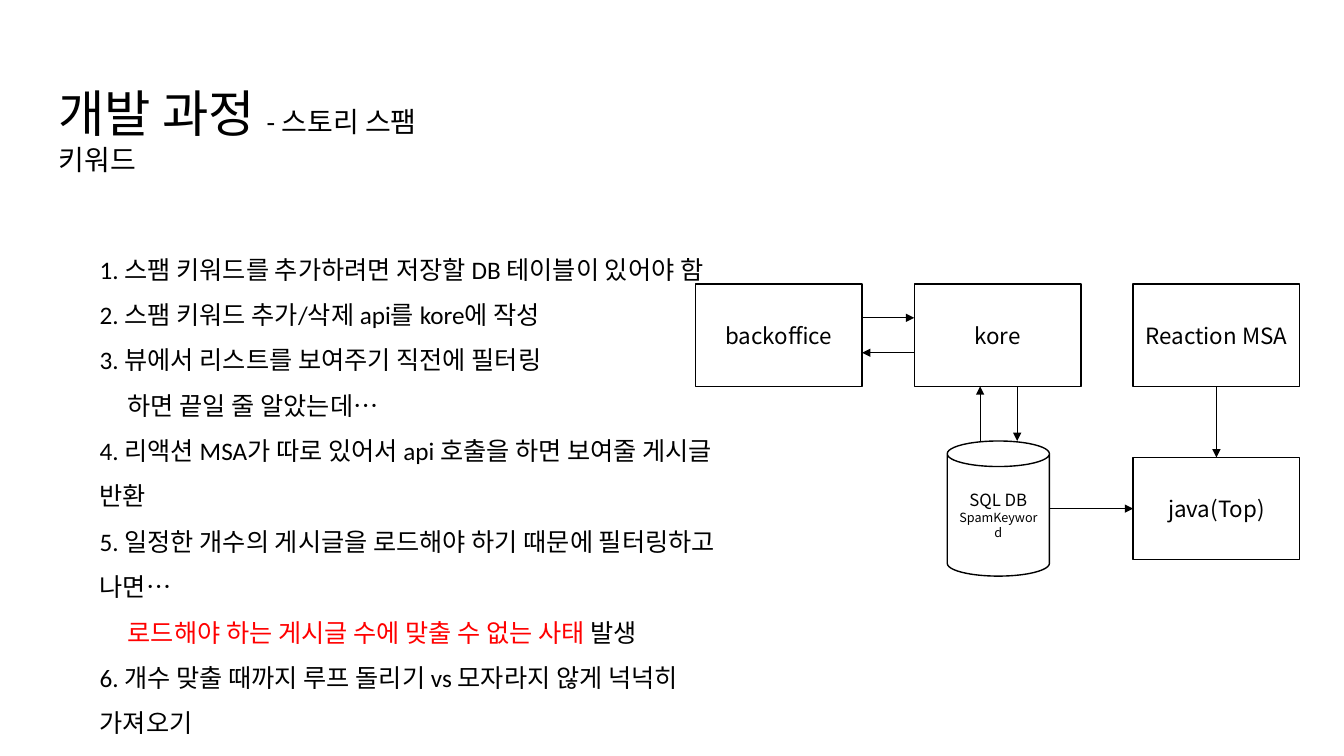
from dataclasses import dataclass

from lxml.etree import SubElement
from pptx import Presentation
from pptx.dml.color import RGBColor
from pptx.enum.shapes import MSO_CONNECTOR, MSO_SHAPE
from pptx.enum.text import MSO_ANCHOR, MSO_AUTO_SIZE, PP_ALIGN
from pptx.oxml.ns import qn
from pptx.util import Pt

TITLE = [("개발 과정 ", "title"), ("- 스토리 스팸 키워드", "subtitle")]
STEPS = [
    (0, [("1. 스팸 키워드를 추가하려면 저장할 DB 테이블이 있어야 함", "ink")]),
    (0, [("2. 스팸 키워드 추가/삭제 api를 kore에 작성", "ink")]),
    (0, [("3. 뷰에서 리스트를 보여주기 직전에 필터링", "ink")]),
    (20, [("하면 끝일 줄 알았는데…", "ink")]),
    (0, [("4. 리액션 MSA가 따로 있어서 api 호출을 하면 보여줄 게시글 반환", "ink")]),
    (0, [("5. 일정한 개수의 게시글을 로드해야 하기 때문에 필터링하고 나면…", "ink")]),
    (20, [("로드해야 하는 게시글 수에 맞출 수 없는 사태", "alert"), (" 발생", "ink")]),
    (0, [("6. 개수 맞출 때까지 루프 돌리기 vs 모자라지 않게 넉넉히 가져오기", "ink")]),
]
SERVICES = [("backoffice", 0, 0), ("kore", 1, 0), ("Reaction MSA", 2, 0), ("java(Top)", 2, 1)]
DATABASE = [("SQL DB", "db"), ("SpamKeyword", "table")]


@dataclass(frozen=True)
class Theme:
    text_font: str = "Calibri"
    box_font: str = "Noto Sans CJK KR"
    ink: RGBColor = RGBColor(0, 0, 0)
    alert: RGBColor = RGBColor(255, 0, 0)
    paper: RGBColor = RGBColor(255, 255, 255)
    title: int = 36
    subtitle: int = 20
    body: int = 18
    box: int = 16
    db: int = 12
    table: int = 9


T = Theme()
BOX_W, BOX_H = 119, 73
LEFT, TOP = 496.8, 203
COL_STEP, ROW_STEP = 156.3, 123.8
CAN_W, CAN_H = 73, 96.5


def place(sp, x, y, w, h):
    sp.left, sp.top, sp.width, sp.height = Pt(x), Pt(y), Pt(w), Pt(h)
    tf = sp.text_frame
    tf.word_wrap = True
    tf.auto_size = MSO_AUTO_SIZE.NONE
    tf.vertical_anchor = MSO_ANCHOR.TOP
    return tf


def add_run(p, text, name, size, color):
    r = p.add_run()
    r.text = text
    r.font.name, r.font.size = name, Pt(size)
    r.font.color.rgb = color


def add_title(s):
    tf = place(s.shapes.title, 34.6, 54.7, 311.8, 51)
    p = tf.paragraphs[0]
    p.alignment = PP_ALIGN.LEFT
    for text, size in TITLE:
        add_run(p, text, T.text_font, getattr(T, size), T.ink)


def add_steps(s):
    tf = place(s.placeholders[1], 64, 167, 468.7, 265)
    for i, (indent, runs) in enumerate(STEPS):
        p = tf.paragraphs[0] if i == 0 else tf.add_paragraph()
        p.line_spacing = 1.5
        p.space_before = Pt(0)
        pPr = p._p.get_or_add_pPr()
        pPr.set("marL", str(Pt(indent)))
        pPr.set("indent", "0")
        SubElement(pPr, qn("a:buNone"))
        for text, color in runs:
            add_run(p, text, T.text_font, T.body, getattr(T, color))


def add_node(s, kind, x, y, w, h, lines):
    sp = s.shapes.add_shape(kind, Pt(x), Pt(y), Pt(w), Pt(h))
    sp.shadow.inherit = False
    sp.fill.solid()
    sp.fill.fore_color.rgb = T.paper
    sp.line.color.rgb = T.ink
    sp.line.width = Pt(1)
    tf = sp.text_frame
    tf.word_wrap = True
    tf.vertical_anchor = MSO_ANCHOR.MIDDLE
    for i, (text, size) in enumerate(lines):
        p = tf.paragraphs[0] if i == 0 else tf.add_paragraph()
        p.alignment = PP_ALIGN.CENTER
        add_run(p, text, T.box_font, getattr(T, size), T.ink)


def add_arrow(s, x1, y1, x2, y2):
    c = s.shapes.add_connector(MSO_CONNECTOR.STRAIGHT, Pt(x1), Pt(y1), Pt(x2), Pt(y2))
    c.line.color.rgb = T.ink
    c.line.width = Pt(0.5)
    SubElement(c.line._get_or_add_ln(), qn("a:tailEnd"), type="triangle")
    SubElement(c._element.spPr, qn("a:effectLst"))


def add_diagram(s):
    for name, col, row in SERVICES:
        add_node(s, MSO_SHAPE.RECTANGLE, LEFT + col * COL_STEP, TOP + row * ROW_STEP,
                 BOX_W, BOX_H, [(name, "box")])
    kore_x, right_x = LEFT + COL_STEP, LEFT + 2 * COL_STEP
    bottom, java_y = TOP + BOX_H, TOP + ROW_STEP
    java_mid = java_y + BOX_H / 2
    can_x, can_y = kore_x + (BOX_W - CAN_W) / 2 + 0.5, java_mid - CAN_H / 2
    add_node(s, MSO_SHAPE.CAN, can_x, can_y, CAN_W, CAN_H, DATABASE)

    add_arrow(s, LEFT + BOX_W, TOP + 24, kore_x, TOP + 24)
    add_arrow(s, kore_x, TOP + 49, LEFT + BOX_W, TOP + 49)
    add_arrow(s, kore_x + 47, can_y, kore_x + 47, bottom)
    add_arrow(s, kore_x + 73.5, bottom, kore_x + 73.5, can_y)
    add_arrow(s, right_x + BOX_W / 2, bottom, right_x + BOX_W / 2, java_y)
    add_arrow(s, can_x + CAN_W, java_mid, right_x, java_mid)


def main():
    prs = Presentation()
    prs.slide_width, prs.slide_height = Pt(960), Pt(540)
    s = prs.slides.add_slide(prs.slide_layouts[1])
    add_title(s)
    add_steps(s)
    add_diagram(s)
    prs.save("out.pptx")


if __name__ == "__main__":
    main()
